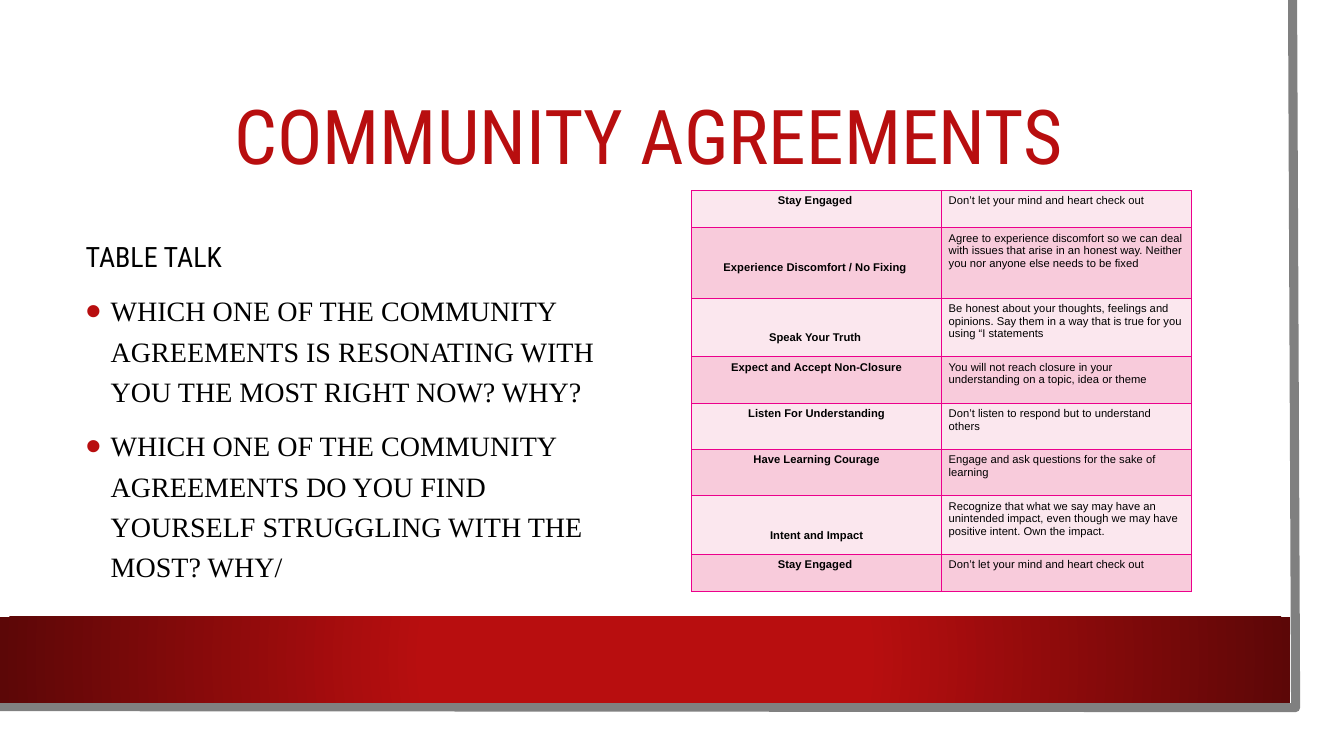
from pptx import Presentation
from pptx.dml.color import RGBColor
from pptx.enum.shapes import MSO_SHAPE
from pptx.enum.text import MSO_ANCHOR, PP_ALIGN
from pptx.oxml import parse_xml
from pptx.oxml.ns import nsdecls
from pptx.util import Inches, Pt

RED = RGBColor(0xB8, 0x0E, 0x0F)
DARK_RED = RGBColor(0x5C, 0x07, 0x07)
GRAY = RGBColor(0x80, 0x80, 0x80)
BLACK = RGBColor(0, 0, 0)
MAGENTA = RGBColor(0xEC, 0x00, 0x8C)
BANDS = [RGBColor(0xFB, 0xE7, 0xEE), RGBColor(0xF8, 0xCB, 0xDB)]


def style(p, size, name, color, bold=False):
    for r in p.runs:
        r.font.size = Pt(size)
        r.font.name = name
        r.font.color.rgb = color
        r.font.bold = bold


prs = Presentation()
prs.slide_width = Inches(13.33)
prs.slide_height = Inches(7.5)
s = prs.slides.add_slide(prs.slide_layouts[5])

builder = s.shapes.build_freeform(Inches(12.82), 0)
builder.add_line_segments([(Inches(12.85), Inches(7.02)), (Inches(-0.03), Inches(7.01))], close=False)
edge = builder.convert_to_shape()
edge.shadow.inherit = False
edge.fill.background()
edge.line.color.rgb = GRAY
edge.line.width = Pt(6.5)

band = s.shapes.add_shape(MSO_SHAPE.RECTANGLE, 0, Inches(6.12), Inches(12.8), Inches(0.85))
band.shadow.inherit = False
band.line.fill.background()
band.element.spPr.find("{*}prstGeom").addnext(parse_xml(
    f'<a:gradFill {nsdecls("a")} rotWithShape="1"><a:gsLst>'
    f'<a:gs pos="34000"><a:srgbClr val="{RED}"/></a:gs>'
    f'<a:gs pos="100000"><a:srgbClr val="{DARK_RED}"/></a:gs></a:gsLst>'
    '<a:path path="circle"><a:fillToRect l="50000" t="50000" r="50000" b="50000"/></a:path>'
    '</a:gradFill>'))

title = s.shapes.title
title.left, title.top, title.width, title.height = Inches(0.75), Inches(0.75), Inches(11.37), Inches(1.27)
tf = title.text_frame
tf.text = "COMMUNITY AGREEMENTS"
tf.vertical_anchor = MSO_ANCHOR.MIDDLE
p = tf.paragraphs[0]
p.alignment = PP_ALIGN.CENTER
p.line_spacing = 0.9
style(p, 54, "Roboto Condensed", RED)

questions = [
    "WHICH ONE OF THE COMMUNITY AGREEMENTS IS RESONATING WITH YOU THE MOST RIGHT NOW? WHY?",
    "WHICH ONE OF THE COMMUNITY AGREEMENTS DO YOU FIND YOURSELF STRUGGLING WITH THE MOST? WHY/",
]
tf = s.shapes.add_textbox(Inches(0.75), Inches(2.26), Inches(5.57), Inches(3.62)).text_frame
tf.word_wrap = True
p = tf.paragraphs[0]
p.text = "TABLE TALK"
p.line_spacing = 1.2
style(p, 20, "Roboto Condensed", BLACK)
for question in questions:
    p = tf.add_paragraph()
    p.text = question
    p.line_spacing = 1.2
    p.space_before = Pt(10)
    pPr = p._p.get_or_add_pPr()
    pPr.set("marL", str(Inches(0.25)))
    pPr.set("indent", str(Inches(-0.25)))
    for bullet in (f'<a:buClr {nsdecls("a")}><a:srgbClr val="{RED}"/></a:buClr>',
                   f'<a:buSzPct {nsdecls("a")} val="160000"/>',
                   f'<a:buFont {nsdecls("a")} typeface="Arial"/>',
                   f'<a:buChar {nsdecls("a")} char="•"/>'):
        pPr.append(parse_xml(bullet))
    style(p, 20, "Times New Roman", BLACK)

TOP, LOW = 0.04, 0.33
agreements = [
    (0.37, TOP, "Stay Engaged ", "Don’t let your mind and heart check out"),
    (0.7, LOW, "Experience Discomfort / No Fixing ",
     "Agree to experience discomfort so we can deal with issues that arise in an honest way. Neither you nor anyone else needs to be fixed"),
    (0.58, LOW, "Speak Your Truth ",
     "Be honest about your thoughts, feelings and opinions. Say them in a way that is true for you using “I statements"),
    (0.46, TOP, "Expect and Accept Non-Closure",
     "You will not reach closure in your understanding on a topic, idea or theme"),
    (0.46, TOP, "Listen For Understanding", "Don’t listen to respond but to understand others"),
    (0.46, TOP, "Have Learning Courage", "Engage and ask questions for the sake of learning"),
    (0.58, LOW, "Intent and Impact",
     "Recognize that what we say may have an unintended impact, even though we may have positive intent. Own the impact."),
    (0.37, TOP, "Stay Engaged ", "Don’t let your mind and heart check out"),
]
table = s.shapes.add_table(len(agreements), 2, Inches(6.86), Inches(1.89), Inches(4.96), Inches(3.98)).table
for i, (height, name_top, *texts) in enumerate(agreements):
    table.rows[i].height = Inches(height)
    for j, text in enumerate(texts):
        cell = table.cell(i, j)
        cell.margin_left = cell.margin_right = Inches(0.07)
        cell.margin_top = Inches(TOP if j else name_top)
        cell.margin_bottom = Inches(0.04)
        p = cell.text_frame.paragraphs[0]
        p.text = text
        p.alignment = PP_ALIGN.LEFT if j else PP_ALIGN.CENTER
        style(p, 8, "Arial", BLACK, bold=j == 0)
        tcPr = cell._tc.get_or_add_tcPr()
        for side in ("lnL", "lnR", "lnT", "lnB"):
            tcPr.append(parse_xml(
                f'<a:{side} {nsdecls("a")} w="{Pt(0.77)}"><a:solidFill>'
                f'<a:srgbClr val="{MAGENTA}"/></a:solidFill></a:{side}>'))
        cell.fill.solid()
        cell.fill.fore_color.rgb = BANDS[i % 2]

prs.save("out.pptx")
